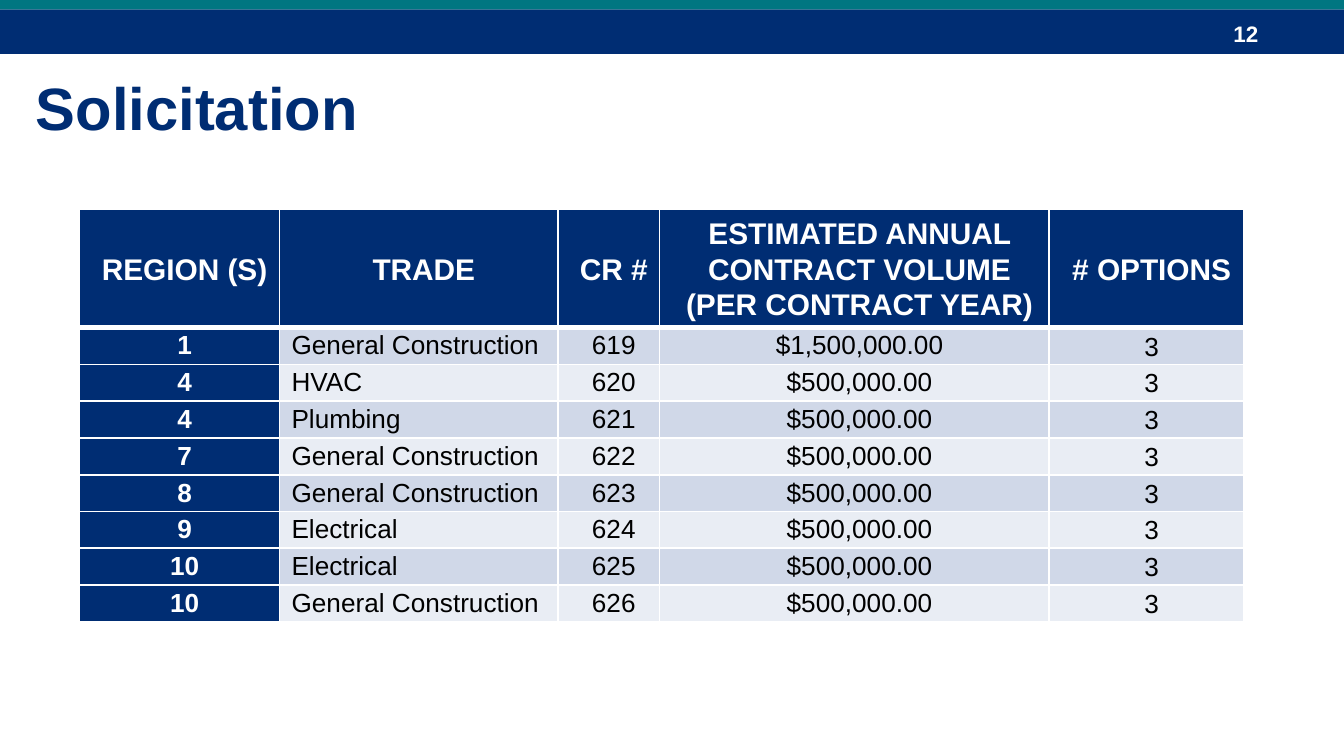
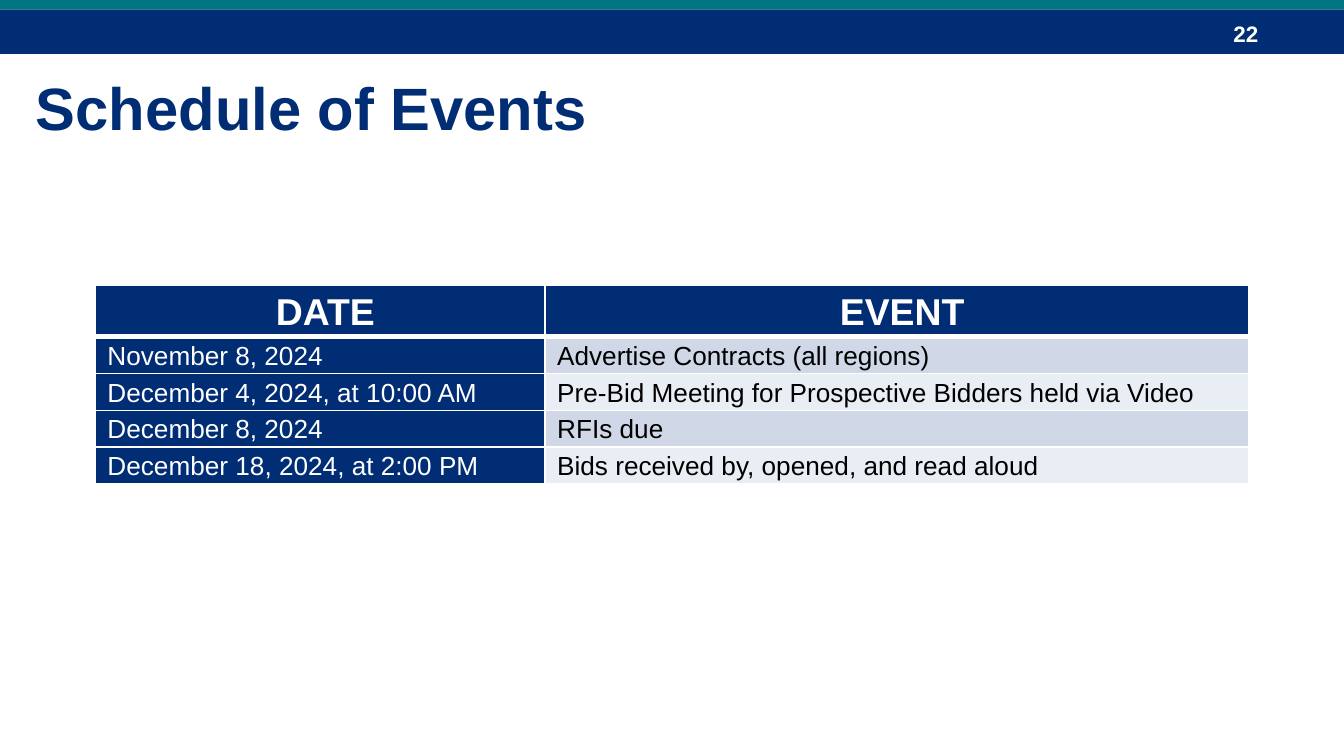
from dataclasses import dataclass

from lxml.etree import SubElement
from pptx import Presentation
from pptx.dml.color import RGBColor
from pptx.enum.shapes import MSO_SHAPE as Shape
from pptx.enum.text import MSO_ANCHOR as Anchor, PP_ALIGN as Align
from pptx.oxml.ns import qn
from pptx.util import Cm, Pt

COLORS = {
    "navy": "002D73",
    "teal": "007681",
    "white": "FFFFFF",
    "black": "000000",
    "odd_row": "D0D8E8",
    "even_row": "E9EDF4",
}
FONT = "Arial"
SLIDE_WIDTH, SLIDE_HEIGHT = 25.4, 14.29
CELL_INSET = 0.03
CELL_INDENT = 0.2
LINE_SPACING = 1.07
BODY_SIZE = 14


@dataclass(frozen=True)
class Band:
    top: float
    height: float
    color: str


@dataclass(frozen=True)
class Column:
    heading: str
    width: float
    align: Align = Align.CENTER
    anchor: Anchor = Anchor.MIDDLE
    color: str = "black"
    fill: str | None = None
    bold: bool = False


@dataclass(frozen=True)
class TableSpec:
    left: float
    top: float
    header_height: float
    row_height: float
    header_size: int
    columns: tuple[Column, ...]
    rows: tuple[tuple[str, ...], ...]


@dataclass(frozen=True)
class Page:
    number: str
    title: str
    table: TableSpec


BANDS = (Band(0.18, 0.84, "navy"), Band(-0.05, 0.23, "teal"))

SOLICITATION = TableSpec(
    1.5, 3.96, 2.21, 0.69, 16,
    (
        Column("REGION (S)", 3.78, anchor=Anchor.TOP, color="white", fill="navy", bold=True),
        Column("TRADE", 5.26, Align.LEFT, Anchor.TOP),
        Column("CR #", 1.92, anchor=Anchor.TOP),
        Column("ESTIMATED ANNUAL CONTRACT VOLUME (PER CONTRACT YEAR)", 7.37, anchor=Anchor.TOP),
        Column("# OPTIONS", 3.67),
    ),
    (
        ("1", "General Construction", "619", "$1,500,000.00", "3"),
        ("4", "HVAC", "620", "$500,000.00", "3"),
        ("4", "Plumbing", "621", "$500,000.00", "3"),
        ("7", "General Construction", "622", "$500,000.00", "3"),
        ("8", "General Construction", "623", "$500,000.00", "3"),
        ("9", "Electrical", "624", "$500,000.00", "3"),
        ("10", "Electrical", "625", "$500,000.00", "3"),
        ("10", "General Construction", "626", "$500,000.00", "3"),
    ),
)

SCHEDULE = TableSpec(
    1.8, 5.4, 0.96, 0.65, 20,
    (
        Column("DATE", 8.5, Align.LEFT, color="white", fill="navy"),
        Column("EVENT", 13.3, Align.LEFT),
    ),
    (
        ("November 8, 2024", "Advertise Contracts (all regions)"),
        ("December 4, 2024, at 10:00 AM", "Pre-Bid Meeting for Prospective Bidders held via Video"),
        ("December 8, 2024", "RFIs due"),
        ("December 18, 2024, at 2:00 PM", "Bids received by, opened, and read aloud"),
    ),
)

PAGES = (
    Page("12", "Solicitation", SOLICITATION),
    Page("22", "Schedule of Events", SCHEDULE),
)


def rgb(name: str) -> RGBColor:
    return RGBColor.from_string(COLORS[name])


def set_font(paragraph, size: int, color: str, bold: bool) -> None:
    font = paragraph.font
    font.name = FONT
    font.size = Pt(size)
    font.bold = bold
    font.color.rgb = rgb(color)


def add_band(slide, band: Band) -> None:
    shape = slide.shapes.add_shape(
        Shape.RECTANGLE, 0, Cm(band.top), Cm(SLIDE_WIDTH), Cm(band.height)
    )
    shape.shadow.inherit = False
    shape.fill.solid()
    shape.fill.fore_color.rgb = rgb(band.color)
    shape.line.fill.background()


def add_text(slide, text: str, left: float, top: float, width: float, height: float,
             size: int, color: str) -> None:
    frame = slide.shapes.add_textbox(Cm(left), Cm(top), Cm(width), Cm(height)).text_frame
    frame.word_wrap = True
    paragraph = frame.paragraphs[0]
    paragraph.text = text
    set_font(paragraph, size, color, True)


def set_borders(cell, top: int, bottom: int) -> None:
    properties = cell._tc.get_or_add_tcPr()
    for side, points in (("L", 1), ("R", 1), ("T", top), ("B", bottom)):
        line = SubElement(properties, qn(f"a:ln{side}"), w=str(Pt(points)))
        fill = SubElement(line, qn("a:solidFill"))
        SubElement(fill, qn("a:srgbClr"), val=COLORS["white"])


def fill_cell(cell, text: str, column: Column, fill: str, size: int) -> None:
    cell.margin_left = cell.margin_right = Cm(CELL_INSET)
    cell.margin_top = cell.margin_bottom = Cm(CELL_INSET)
    cell.vertical_anchor = column.anchor
    cell.fill.solid()
    cell.fill.fore_color.rgb = rgb(fill)
    paragraph = cell.text_frame.paragraphs[0]
    paragraph.text = text
    paragraph.alignment = column.align
    paragraph.line_spacing = LINE_SPACING
    properties = paragraph._p.get_or_add_pPr()
    properties.set("marL", str(Cm(CELL_INDENT)))
    properties.set("indent", "0")
    set_font(paragraph, size, column.color, column.bold)


def add_table(slide, spec: TableSpec) -> None:
    width = sum(column.width for column in spec.columns)
    height = spec.header_height + spec.row_height * len(spec.rows)
    table = slide.shapes.add_table(
        len(spec.rows) + 1, len(spec.columns),
        Cm(spec.left), Cm(spec.top), Cm(width), Cm(height),
    ).table
    table.horz_banding = False
    table.rows[0].height = Cm(spec.header_height)
    for index, column in enumerate(spec.columns):
        table.columns[index].width = Cm(column.width)
        cell = table.cell(0, index)
        set_borders(cell, 1, 3)
        heading = Column(column.heading, column.width, color="white", bold=True)
        fill_cell(cell, column.heading, heading, "navy", spec.header_size)
    for row_index, row in enumerate(spec.rows, start=1):
        table.rows[row_index].height = Cm(spec.row_height)
        row_fill = "odd_row" if row_index % 2 else "even_row"
        for index, (column, text) in enumerate(zip(spec.columns, row)):
            cell = table.cell(row_index, index)
            set_borders(cell, 3 if row_index == 1 else 1, 1)
            fill_cell(cell, text, column, column.fill or row_fill, BODY_SIZE)


def add_page(presentation, page: Page) -> None:
    slide = presentation.slides.add_slide(presentation.slide_layouts[6])
    for band in BANDS:
        add_band(slide, band)
    add_text(slide, page.number, 23.06, 0.25, 1.9, 0.76, 12, "white")
    add_text(slide, page.title, 0.43, 1.22, 24.13, 1.63, 32, "navy")
    add_table(slide, page.table)


def main() -> None:
    presentation = Presentation()
    presentation.slide_width = Cm(SLIDE_WIDTH)
    presentation.slide_height = Cm(SLIDE_HEIGHT)
    for page in PAGES:
        add_page(presentation, page)
    presentation.save("out.pptx")


if __name__ == "__main__":
    main()
